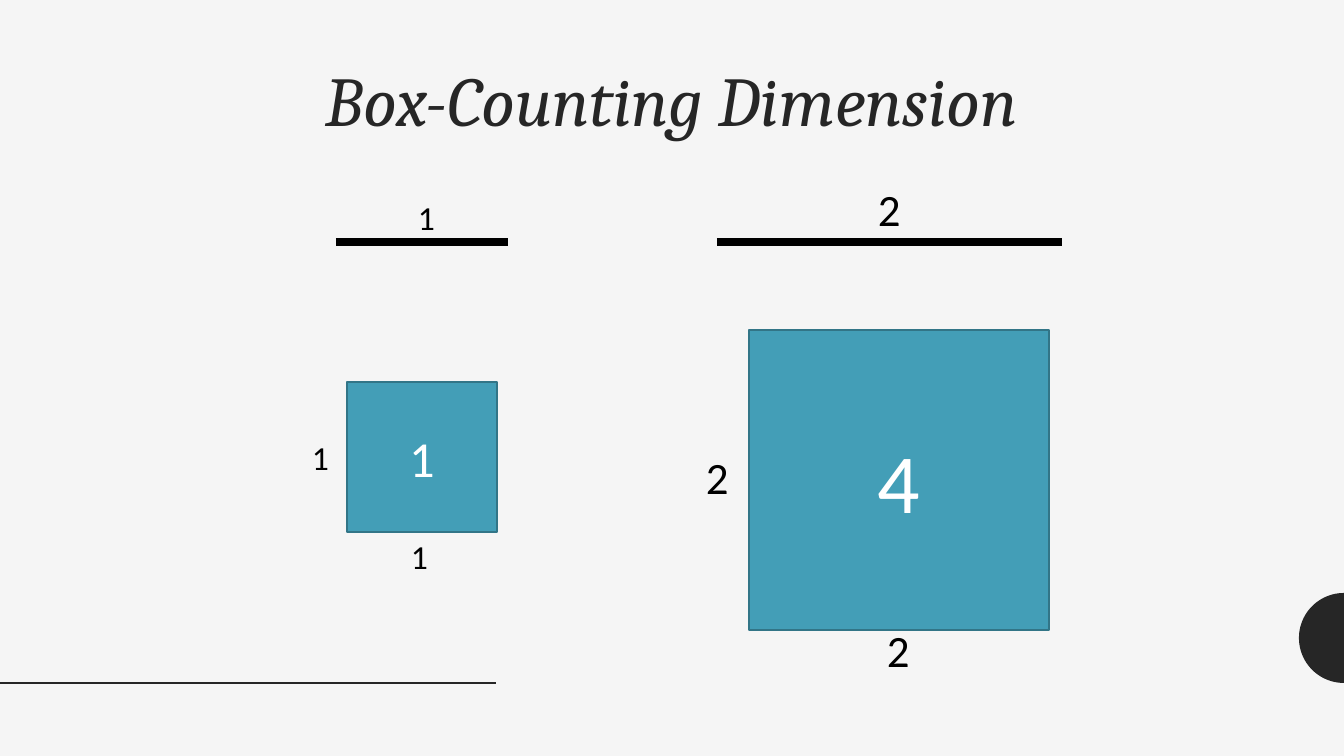
from math import cos, pi, sin

from lxml.etree import SubElement
from pptx import Presentation
from pptx.dml.color import RGBColor
from pptx.enum.shapes import MSO_CONNECTOR as Connector, MSO_SHAPE as Shape
from pptx.enum.text import MSO_ANCHOR as Anchor, PP_ALIGN as Align
from pptx.oxml.ns import qn
from pptx.util import Emu, Pt

# Content
TITLE = "Box-Counting Dimension"
SQUARES = [  # area, left, top, side, text size
    ("1", 347, 382, 150, 36),
    ("4", 749, 330, 300, 60),
]
SEGMENTS = [(336, 508), (717, 1062)]  # from x, to x
SEGMENT_Y = 242
LABELS = [  # length, text size, box height, box corners
    ("1", 24, 51, [(408, 192), (401, 531), (302, 432)]),
    ("2", 32, 64, [(868, 177), (877, 618), (696, 445)]),
]
LABEL_WIDTH = 44

# Look
WIDTH, HEIGHT = 1344, 756
SCALE = 914400 / 100.8
BACKGROUND = RGBColor(0xF5, 0xF5, 0xF5)
DARK = RGBColor(0x26, 0x26, 0x26)
TEAL = RGBColor(0x43, 0x9E, 0xB7)
TEAL_EDGE = RGBColor(0x32, 0x75, 0x87)
BLACK = RGBColor(0, 0, 0)
WHITE = RGBColor(0xFF, 0xFF, 0xFF)


def px(length):
    return Emu(round(length * SCALE))


def write(shape, text, size, color=BLACK, font="Calibri", italic=False,
          align=Align.LEFT, anchor=Anchor.TOP, spacing=1.0):
    frame = shape.text_frame
    frame.word_wrap = True
    frame.vertical_anchor = anchor
    paragraph = frame.paragraphs[0]
    paragraph.alignment = align
    paragraph.line_spacing = spacing
    run = paragraph.add_run()
    run.text = text
    run.font.name = font
    run.font.size = Pt(size)
    run.font.italic = italic
    run.font.color.rgb = color


def add_text(box, text, size, **style):
    write(slide.shapes.add_textbox(*map(px, box)), text, size, **style)


def add_line(left, right, y, color, weight):
    line = slide.shapes.add_connector(
        Connector.STRAIGHT, px(left), px(y), px(right), px(y))
    line.line.color.rgb = color
    line.line.width = Pt(weight)
    SubElement(line._element.spPr, qn("a:effectLst"))


presentation = Presentation()
presentation.slide_width, presentation.slide_height = px(WIDTH), px(HEIGHT)
slide = presentation.slides.add_slide(presentation.slide_layouts[6])
slide.background.fill.solid()
slide.background.fill.fore_color.rgb = BACKGROUND

# Half disc at the right edge
center_y, radius, steps = 638, 45, 48
arc = [(px(WIDTH - radius * sin(pi * i / steps)),
        px(center_y - radius * cos(pi * i / steps))) for i in range(steps + 1)]
builder = slide.shapes.build_freeform(*arc[0])
builder.add_line_segments(arc[1:], close=True)
disc = builder.convert_to_shape()
disc.shadow.inherit = False
disc.fill.solid()
disc.fill.fore_color.rgb = DARK
disc.line.fill.background()

# Footer rule and title
add_line(0, 496, 683, DARK, 2)
add_text((84, 61, 1176, 121), TITLE, 50, color=DARK, font="Cambria",
         italic=True, align=Align.CENTER, spacing=0.9)

# Squares with their areas
for area, left, top, side, size in SQUARES:
    square = slide.shapes.add_shape(
        Shape.RECTANGLE, px(left), px(top), px(side), px(side))
    square.shadow.inherit = False
    square.fill.solid()
    square.fill.fore_color.rgb = TEAL
    square.line.color.rgb = TEAL_EDGE
    square.line.width = Pt(1)
    write(square, area, size, color=WHITE, align=Align.CENTER,
          anchor=Anchor.MIDDLE)

# Line segments
for left, right in SEGMENTS:
    add_line(left, right, SEGMENT_Y, BLACK, 6)

# Length labels
for length, size, height, corners in LABELS:
    for left, top in corners:
        add_text((left, top, LABEL_WIDTH, height), length, size)

presentation.save("out.pptx")
